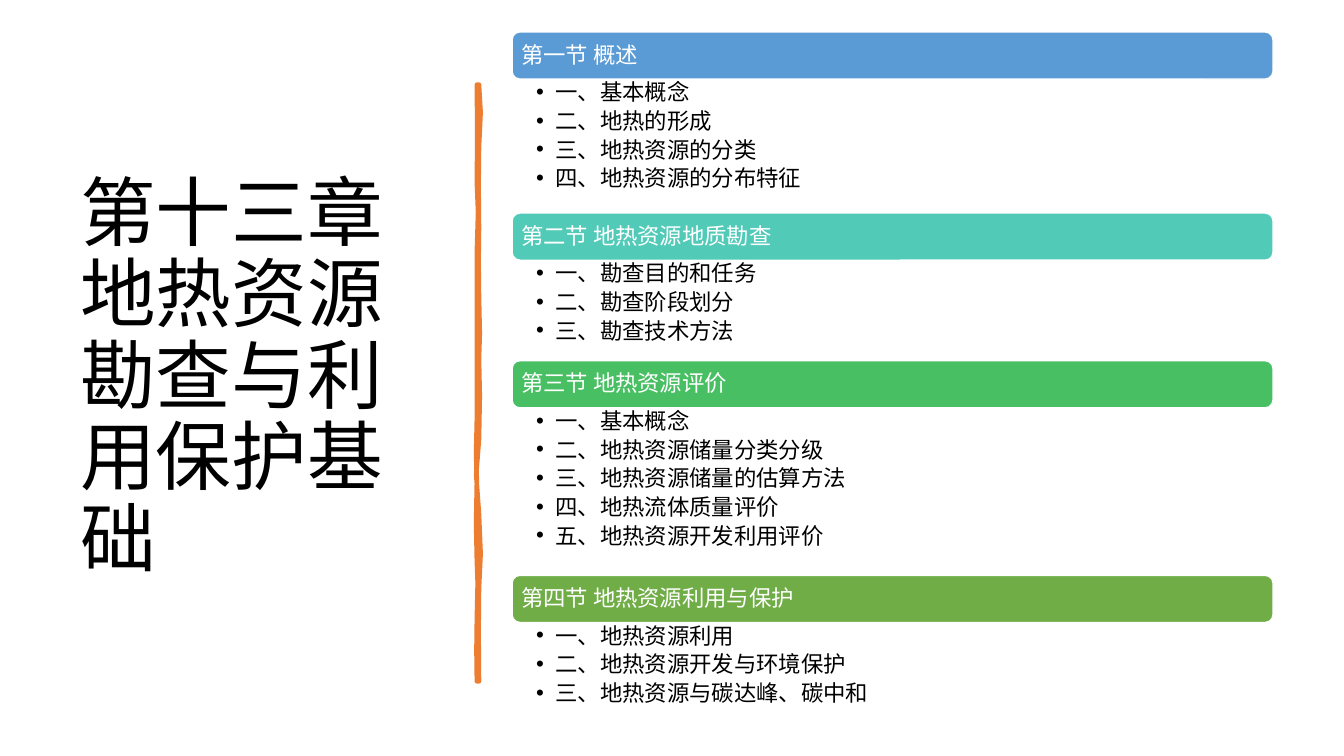
import dataclasses

import pptx
import pptx.dml.color
import pptx.enum.shapes
import pptx.enum.text
import pptx.util
from lxml import etree

FONT = "Noto Sans CJK SC"
BLACK, WHITE, ORANGE = "000000", "FFFFFF", "ED7D31"

deck = pptx.Presentation()
deck.slide_width = pptx.util.Inches(13.33)
deck.slide_height = pptx.util.Inches(7.5)
slide = deck.slides.add_slide(deck.slide_layouts[6])


@dataclasses.dataclass(frozen=True)
class Section:
    heading: str
    color: str
    topics: tuple[str, ...]


@dataclasses.dataclass(frozen=True)
class Box:
    """Left, top, width and height in percent of the slide."""
    left: float
    top: float
    width: float
    height: float

    def lengths(self) -> tuple[int, int, int, int]:
        return across(self.left), down(self.top), across(self.width), down(self.height)


def across(percent: float) -> int:
    return round(deck.slide_width * percent / 100)


def down(percent: float) -> int:
    return round(deck.slide_height * percent / 100)


def paint(color_format, color: str) -> None:
    color_format.rgb = pptx.dml.color.RGBColor.from_string(color)


def set_frame(frame, insets: tuple[float, float, float, float], middle: bool) -> None:
    """Insets run left, top, right, bottom in percent of the slide."""
    left, top, right, bottom = insets
    frame.word_wrap = True
    frame.margin_left, frame.margin_right = across(left), across(right)
    frame.margin_top, frame.margin_bottom = down(top), down(bottom)
    anchors = pptx.enum.text.MSO_ANCHOR
    frame.vertical_anchor = anchors.MIDDLE if middle else anchors.TOP


def write(paragraph, text: str, size: float, color: str, line_height: float) -> None:
    paragraph.alignment = pptx.enum.text.PP_ALIGN.LEFT
    paragraph.line_spacing = pptx.util.Pt(line_height)
    run = paragraph.add_run()
    run.text = text
    run.font.size = pptx.util.Pt(size)
    run.font.name = FONT
    paint(run.font.color, color)
    east_asian = etree.SubElement(run.font._element, pptx.oxml.ns.qn("a:ea"))
    east_asian.set("typeface", FONT)


def add_bullet(paragraph, indent: int) -> None:
    paragraph.level = 1
    paragraph.space_after = pptx.util.Pt(3.2)
    properties = paragraph._p.get_or_add_pPr()
    properties.set("marL", str(indent))
    properties.set("indent", str(-indent))
    font = etree.SubElement(properties, pptx.oxml.ns.qn("a:buFont"))
    font.set("typeface", "Arial")
    bullet = etree.SubElement(properties, pptx.oxml.ns.qn("a:buChar"))
    bullet.set("char", "•")


def curve_points(controls: list[tuple[float, float]]) -> list[tuple[int, int]]:
    """Ends and midpoints of cubic curves given as wave columns and slide rows."""
    points = controls[:1]
    for first in range(0, len(controls) - 1, 3):
        start, pull_a, pull_b, end = controls[first:first + 4]
        middle = tuple((start[axis] + 3 * pull_a[axis] + 3 * pull_b[axis] + end[axis]) / 8
                       for axis in (0, 1))
        points = points + [middle, end]
    return [(across(DIVIDER_CENTER + column * WAVE_COLUMN), down(row))
            for column, row in points]


# Chapter title
title = slide.shapes.add_textbox(*Box(5.17, 9.2, 28.05, 81.47).lengths())
set_frame(title.text_frame, (0.8, 0.67, 0.75, 0.67), middle=True)
write(title.text_frame.paragraphs[0], "第十三章 地热资源勘查与利用保护基础", 54, BLACK, 58.2)

# Hand-drawn divider: right edge downwards, left edge back up
DIVIDER_CENTER = 35.56
WAVE_COLUMN = 0.08
RIGHT_EDGE = [
    (1, 11.2), (3, 13.6), (3, 15.87), (1, 19.47), (-1, 23.07), (2, 26), (1, 30.13),
    (0, 34.27), (1, 34.93), (1, 39.2), (1, 43.33), (3, 45.6), (1, 47.47),
    (-1, 49.33), (5, 55.2), (1, 58.13), (-3, 60.93), (-2, 64.53), (1, 68),
    (3, 71.47), (3, 75.2), (1, 77.87), (-1, 80.4), (2, 86.67), (1, 90.13),
]
LEFT_EDGE = [
    (-1, 90.13), (0, 86.13), (-3, 85.87), (-1, 81.73), (0, 77.73), (0, 76), (-1, 74.27),
    (-2, 72.53), (-2, 66), (-1, 63.6), (-1, 61.2), (-3, 59.33), (-1, 55.33),
    (0, 51.47), (-2, 49.73), (-1, 44.67), (0, 39.73), (-2, 37.47), (-1, 33.33),
    (0, 29.07), (1, 26.67), (-1, 24.13), (-4, 21.73), (3, 13.87), (-1, 11.2),
]
outline = curve_points(RIGHT_EDGE) + curve_points(LEFT_EDGE)
builder = slide.shapes.build_freeform(*outline[0])
builder.add_line_segments(outline[1:], close=True)
divider = builder.convert_to_shape()
divider.shadow.inherit = False
divider.fill.solid()
paint(divider.fill.fore_color, ORANGE)
paint(divider.line.color, ORANGE)
divider.line.width = pptx.util.Pt(3.25)

# Sections: a coloured heading bar above its topics
SECTIONS = [
    Section("第一节 概述", "5B9BD5",
            ("一、基本概念", "二、地热的形成", "三、地热资源的分类", "四、地热资源的分布特征")),
    Section("第二节 地热资源地质勘查", "52CAB8",
            ("一、勘查目的和任务", "二、勘查阶段划分", "三、勘查技术方法")),
    Section("第三节 地热资源评价", "49BF64",
            ("一、基本概念", "二、地热资源储量分类分级", "三、地热资源储量的估算方法",
             "四、地热流体质量评价", "五、地热资源开发利用评价")),
    Section("第四节 地热资源利用与保护", "70AD47",
            ("一、地热资源利用", "二、地热资源开发与环境保护", "三、地热资源与碳达峰、碳中和")),
]
LIST_LEFT, LIST_WIDTH = 38.1, 56.62
BAR_HEIGHT, TOPIC_ROW = 6.24, 4.43
TEXT_SIZE, TEXT_LINE = 16, 17.25


def add_section(section: Section, top: float) -> float:
    """Draw a section and return where the next one starts."""
    bar = slide.shapes.add_shape(pptx.enum.shapes.MSO_SHAPE.ROUNDED_RECTANGLE,
                                 *Box(LIST_LEFT, top, LIST_WIDTH, BAR_HEIGHT).lengths())
    bar.shadow.inherit = False
    bar.fill.solid()
    paint(bar.fill.fore_color, section.color)
    paint(bar.line.color, WHITE)
    bar.line.width = pptx.util.Pt(1)
    set_frame(bar.text_frame, (0.5, 0.9, 0.5, 0.9), middle=True)
    write(bar.text_frame.paragraphs[0], section.heading, TEXT_SIZE, WHITE, TEXT_LINE)

    topics_top = top + BAR_HEIGHT
    topics_height = len(section.topics) * TOPIC_ROW
    topics = slide.shapes.add_textbox(
        *Box(LIST_LEFT, topics_top, LIST_WIDTH, topics_height).lengths())
    set_frame(topics.text_frame, (1.8, 0.27, 0.9, 0.27), middle=False)
    for index, topic in enumerate(section.topics):
        frame = topics.text_frame
        paragraph = frame.add_paragraph() if index else frame.paragraphs[0]
        write(paragraph, topic, TEXT_SIZE, BLACK, TEXT_LINE)
        add_bullet(paragraph, across(1.44))
    return topics_top + topics_height


section_top = 4.22
for section in SECTIONS:
    section_top = add_section(section, section_top)

deck.save("out.pptx")
